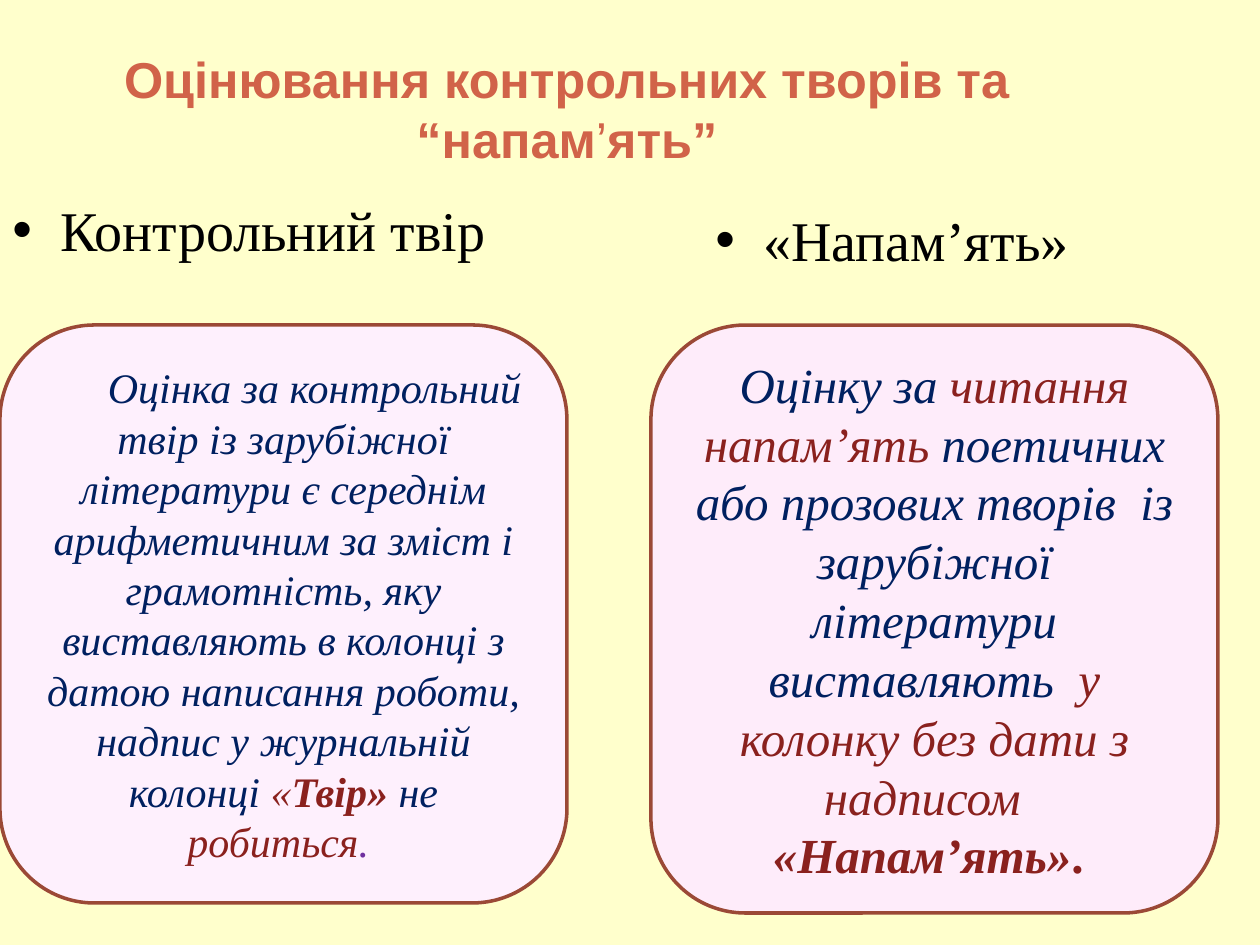
from dataclasses import dataclass

from lxml import etree
from pptx import Presentation
from pptx.dml.color import RGBColor
from pptx.enum.shapes import MSO_SHAPE
from pptx.enum.text import MSO_ANCHOR, PP_ALIGN
from pptx.oxml.ns import qn
from pptx.util import Pt

ROUNDED = MSO_SHAPE.ROUNDED_RECTANGLE
MIDDLE = MSO_ANCHOR.MIDDLE
CENTER = PP_ALIGN.CENTER
EMU_PER_PX = 914400 / 126


@dataclass(frozen=True)
class Theme:
    background: str = "FFFFCC"
    title: str = "D16349"
    heading: str = "000000"
    body: str = "002060"
    accent: str = "8A211E"
    full_stop: str = "7030A0"
    border: str = "9B4936"
    essay_fill: str = "FEF0FD"
    recital_fill: str = "FEECFA"
    title_font: str = "Arial"
    text_font: str = "Times New Roman"
    title_size: float = 28.8
    heading_size: int = 32
    essay_size: int = 24
    recital_size: int = 28
    border_width: int = 2


THEME = Theme()


def px(length):
    return round(length * EMU_PER_PX)


def rgb(color):
    return RGBColor.from_string(color)


def style(paragraph, font, size, color=None):
    paragraph.font.name = font
    paragraph.font.size = Pt(size)
    if color:
        paragraph.font.color.rgb = rgb(color)


def add_text_area(slide, box):
    frame = slide.shapes.add_textbox(*map(px, box)).text_frame
    frame.word_wrap = True
    return frame


def add_title(slide, box, parts):
    frame = add_text_area(slide, box)
    frame.vertical_anchor = MIDDLE
    line = frame.paragraphs[0]
    line.alignment = CENTER
    style(line, THEME.title_font, THEME.title_size, THEME.title)
    for words, bold in parts:
        run = line.add_run()
        run.text = words
        run.font.bold = bold


def add_heading(slide, box, words):
    heading = add_text_area(slide, box).paragraphs[0]
    heading.text = words
    heading.space_before = Pt(THEME.heading_size * 0.2)
    style(heading, THEME.text_font, THEME.heading_size, THEME.heading)
    properties = heading._p.get_or_add_pPr()
    properties.set("marL", str(px(48)))
    properties.set("indent", str(-px(48)))
    etree.SubElement(properties, qn("a:buFont")).set("typeface", "Arial")
    bullet = etree.SubElement(properties, qn("a:buChar"))
    bullet.set("char", "•")
    properties.append(properties.find(qn("a:defRPr")))


def add_card(slide, box, fill, size, parts, first_indent=0):
    card = slide.shapes.add_shape(ROUNDED, *map(px, box))
    card.shadow.inherit = False
    card.fill.solid()
    card.fill.fore_color.rgb = rgb(fill)
    card.line.color.rgb = rgb(THEME.border)
    card.line.width = Pt(THEME.border_width)
    frame = card.text_frame
    frame.word_wrap = True
    frame.vertical_anchor = MIDDLE
    rule = frame.paragraphs[0]
    rule.alignment = CENTER
    style(rule, THEME.text_font, size)
    rule._p.get_or_add_pPr().set("indent", str(px(first_indent)))
    for words, color, bold, italic in parts:
        run = rule.add_run()
        run.text = words
        run.font.color.rgb = rgb(color)
        run.font.bold = bold
        run.font.italic = italic


def main():
    deck = Presentation()
    deck.slide_width, deck.slide_height = px(1260), px(945)
    slide = deck.slides.add_slide(deck.slide_layouts[6])
    slide.background.fill.solid()
    slide.background.fill.fore_color.rgb = rgb(THEME.background)

    add_title(slide, (0, 38, 1134, 141), [
        ("Оцінювання контрольних творів та “напам", True),
        ("’", False),
        ("ять”", True),
    ])
    add_heading(slide, (0, 189, 557, 88), "Контрольний твір")
    add_heading(slide, (703, 199, 557, 84), "«Напам’ять»")

    essay_rule = [
        ("Оцінка за контрольний твір із зарубіжної літератури є середнім "
         "арифметичним за зміст і грамотність, яку виставляють в колонці з "
         "датою написання роботи, надпис у журнальній колонці ",
         THEME.body, False, True),
        ("«", THEME.accent, False, True),
        ("Твір» ", THEME.accent, True, True),
        ("не ", THEME.body, False, True),
        ("робиться", THEME.accent, False, True),
        (". ", THEME.full_stop, False, True),
    ]
    recital_rule = [
        ("Оцінку за ", THEME.body, False, True),
        ("читання напам’ять ", THEME.accent, False, True),
        ("поетичних або прозових творів  із зарубіжної літератури "
         "виставляють  ", THEME.body, False, True),
        ("у колонку без дати з надписом  ", THEME.accent, False, True),
        (" «Напам’ять»", THEME.accent, True, True),
        (". ", THEME.accent, True, False),
    ]
    add_card(slide, (0, 325, 567, 578), THEME.essay_fill, THEME.essay_size,
             essay_rule, first_indent=62)
    add_card(slide, (651, 325, 567, 588), THEME.recital_fill,
             THEME.recital_size, recital_rule)
    deck.save("out.pptx")


if __name__ == "__main__":
    main()
